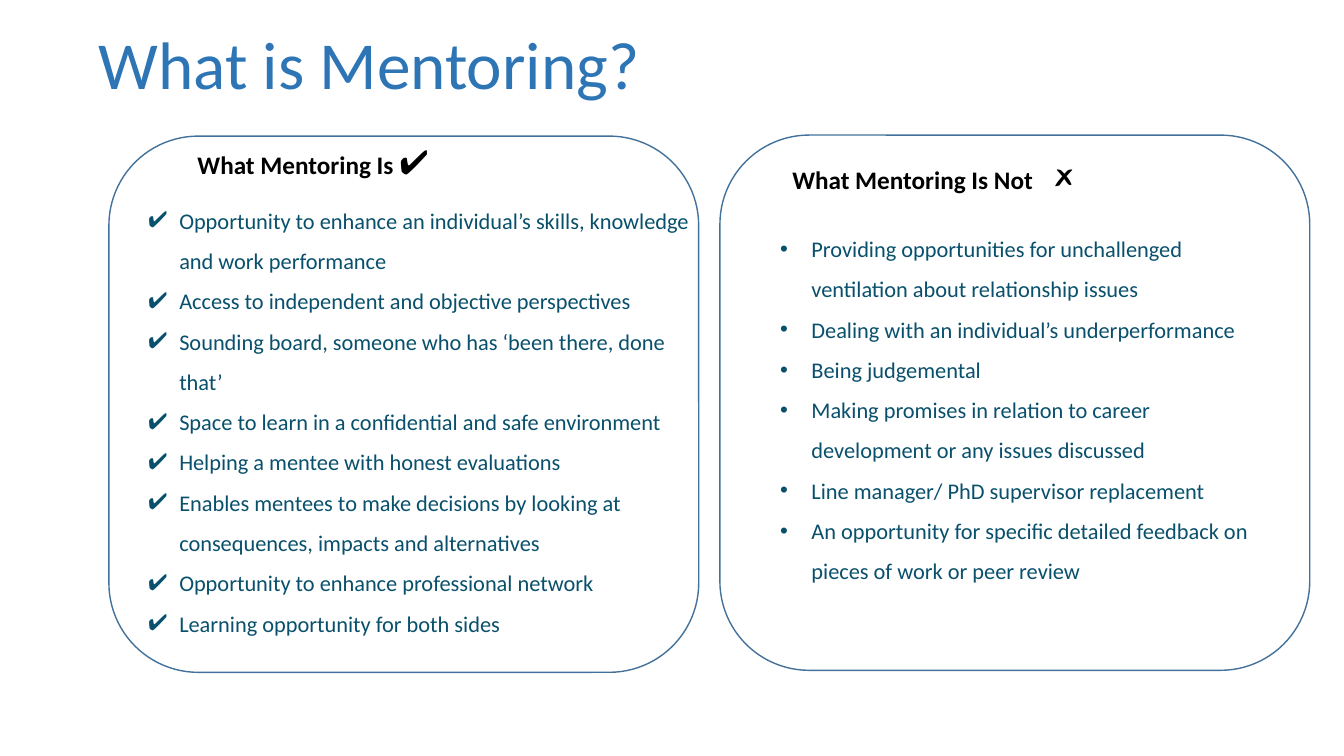
from lxml.etree import SubElement
from pptx import Presentation
from pptx.dml.color import RGBColor
from pptx.enum.shapes import MSO_SHAPE as Shape
from pptx.enum.text import MSO_AUTO_SIZE as AutoSize
from pptx.oxml.ns import qn
from pptx.util import Emu, Pt

PX = 9144  # 100 px to the inch


def px(length):
    return Emu(length * PX)


def color(hex_code):
    return RGBColor.from_string(hex_code)


class MentoringSlide:
    TITLE, BORDER, HEADING, BODY = "2E75B5", "42719B", "000000", "09506C"
    FONT, SYMBOL_FONT = "Calibri", "Noto Sans CJK SC"
    INDENT = 31

    def __init__(self, prs):
        self.slide = prs.slides.add_slide(prs.slide_layouts[6])

    def style(self, font, size, hex_code, bold=False, name=FONT):
        font.name, font.size, font.bold = name, Pt(size), bold
        font.color.rgb = color(hex_code)

    def text_frame(self, x, y, w, h, grow=True):
        frame = self.slide.shapes.add_textbox(px(x), px(y), px(w), px(h)).text_frame
        frame.word_wrap = True
        frame.auto_size = AutoSize.SHAPE_TO_FIT_TEXT if grow else AutoSize.NONE
        return frame

    def title(self, x, y, w, h, wording):
        frame = self.text_frame(x, y, w, h, grow=False)
        frame.text = wording
        line = frame.paragraphs[0]
        line.line_spacing = 0.9
        self.style(line.runs[0].font, 48, self.TITLE)

    def panel(self, x, y, w, h):
        panel = self.slide.shapes.add_shape(
            Shape.ROUNDED_RECTANGLE, px(x), px(y), px(w), px(h))
        panel.shadow.inherit = False
        panel.fill.background()
        panel.line.color.rgb = color(self.BORDER)
        panel.line.width = Pt(1)

    def heading(self, x, y, w, h, wording, mark, mark_font, tab=None):
        line = self.text_frame(x, y, w, h).paragraphs[0]
        if tab:
            tabs = SubElement(line._p.get_or_add_pPr(), qn("a:tabLst"))
            SubElement(tabs, qn("a:tab"), pos=str(px(tab)), algn="l")
        for part, size, name in ((wording, 18, self.FONT), (mark, 24, mark_font)):
            run = line.add_run()
            run.text = part
            self.style(run.font, size, self.HEADING, True, name)

    def bullets(self, x, y, w, h, bullet, points):
        frame = self.text_frame(x, y, w, h)
        frame.text = "\n".join(points)
        for point in frame.paragraphs:
            props = point._p.get_or_add_pPr()
            props.set("marL", str(px(self.INDENT)))
            props.set("indent", str(px(-self.INDENT)))
            SubElement(SubElement(props, qn("a:buClr")), qn("a:srgbClr"), val=self.BODY)
            SubElement(props, qn("a:buFont"), typeface="Arial")
            SubElement(props, qn("a:buChar"), char=bullet)
            point.line_spacing = 1.5
            self.style(point.runs[0].font, 16, self.BODY)


MENTORING_IS = [
    "Opportunity to enhance an individual’s skills, knowledge and work performance",
    "Access to independent and objective perspectives",
    "Sounding board, someone who has ‘been there, done that’",
    "Space to learn in a confidential and safe environment",
    "Helping a mentee with honest evaluations",
    "Enables mentees to make decisions by looking at consequences, impacts and alternatives",
    "Opportunity to enhance professional network",
    "Learning opportunity for both sides",
]
MENTORING_IS_NOT = [
    "Providing opportunities for unchallenged ventilation about relationship issues",
    "Dealing with an individual’s underperformance",
    "Being judgemental",
    "Making promises in relation to career development or any issues discussed",
    "Line manager/ PhD supervisor replacement",
    "An opportunity for specific detailed feedback on pieces of work or peer review",
]


def main():
    prs = Presentation()
    prs.slide_width, prs.slide_height = px(1333), px(750)
    page = MentoringSlide(prs)

    # Title
    page.title(88, 26, 1100, 159, "What is Mentoring?")

    # Rounded panels
    page.panel(108, 135, 585, 532)
    page.panel(714, 134, 585, 531)

    # Panel headings with their marks
    page.heading(776, 150, 667 - 110, 50, "What Mentoring Is Not\t", "🗶",
                 page.SYMBOL_FONT, tab=257)
    page.heading(186, 135, 721, 50, "What Mentoring Is ", "✔", page.FONT)

    # Bullet lists
    page.bullets(137, 187, 577, 450, "✔", MENTORING_IS)
    page.bullets(764, 215, 486, 369, "•", MENTORING_IS_NOT)

    prs.save("out.pptx")


if __name__ == "__main__":
    main()
